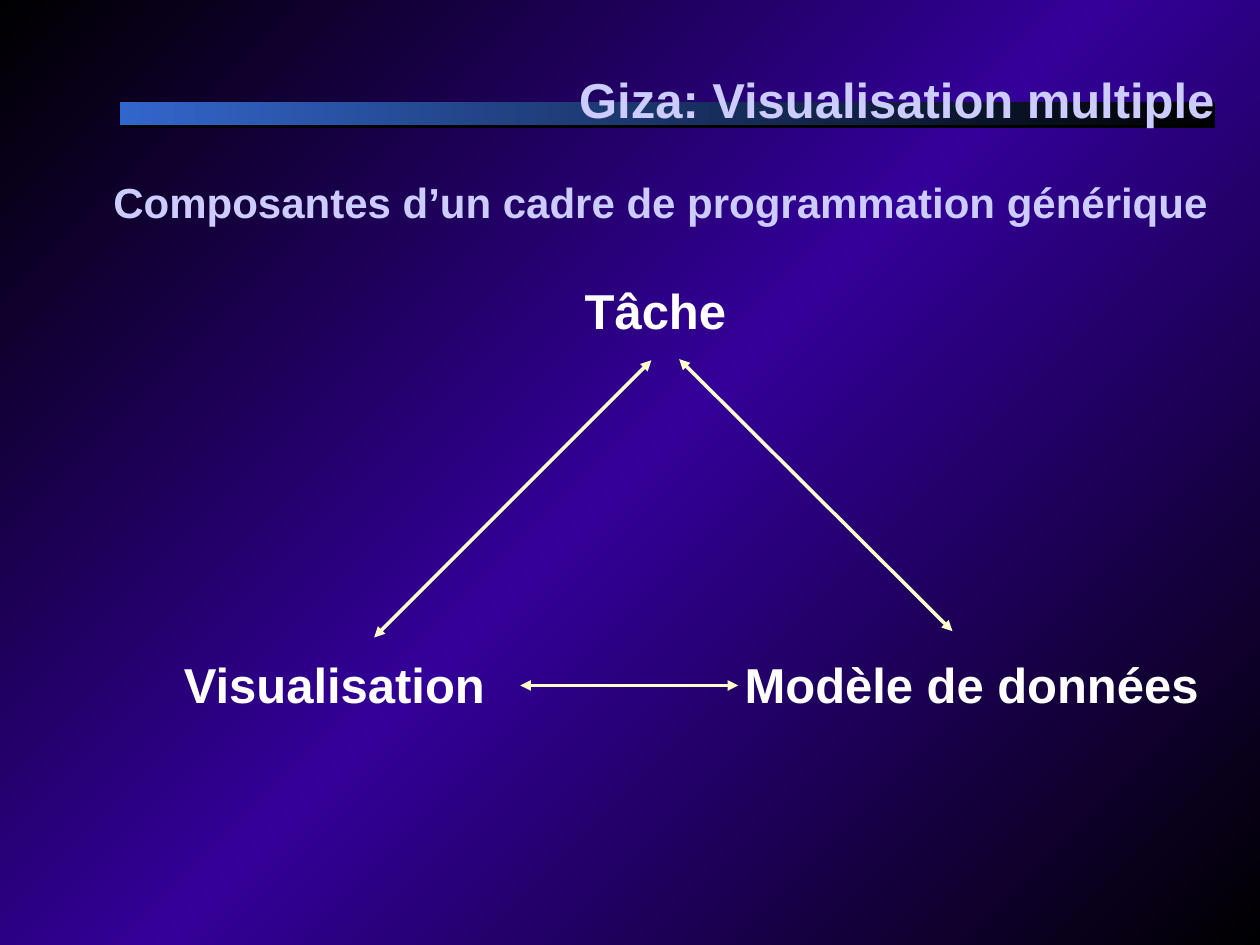
import pptx
import pptx.util
import pptx.dml.color
import pptx.enum.shapes
import pptx.enum.text
import pptx.oxml
import pptx.oxml.ns
from pptx.util import Pt

FONT = "Arial"
LAVENDER = "CCCCFF"
CREAM = "FFFFCC"


def colour(code):
    return pptx.dml.color.RGBColor.from_string(code)


def add_child(parent, tag, **attributes):
    child = pptx.oxml.parse_xml(f"<{tag} {pptx.oxml.ns.nsdecls('a')}/>")
    for name, value in attributes.items():
        child.set(name, str(value))
    parent.append(child)
    return child


def add_block(page, left, top, width, height):
    block = page.shapes.add_shape(
        pptx.enum.shapes.MSO_SHAPE.RECTANGLE, Pt(left), Pt(top), Pt(width), Pt(height))
    block.shadow.inherit = False
    block.line.fill.background()
    return block


def fill_gradient(block, stops, angle):
    block.fill.gradient()
    block.fill.gradient_angle = angle
    stop_list = block.fill._fill._gradFill.find(pptx.oxml.ns.qn("a:gsLst"))
    for old_stop in list(stop_list):
        stop_list.remove(old_stop)
    for percent, code in stops:
        stop = add_child(stop_list, "a:gs", pos=percent * 1000)
        add_child(stop, "a:srgbClr", val=code)


def add_label(page, text, left, top, width, height, size=28, code="FFFFFF"):
    box = page.shapes.add_textbox(Pt(left), Pt(top), Pt(width), Pt(height))
    frame = box.text_frame
    frame.word_wrap = False
    frame.margin_left = frame.margin_right = frame.margin_bottom = 0
    frame.margin_top = Pt(2.5)
    para = frame.paragraphs[0]
    para.text = text
    para.font.name = FONT
    para.font.size = Pt(size)
    para.font.bold = True
    para.font.color.rgb = colour(code)
    return para


def add_double_arrow(page, start, end):
    arrow = page.shapes.add_connector(
        pptx.enum.shapes.MSO_CONNECTOR.STRAIGHT, *map(Pt, start + end))
    arrow.line.color.rgb = colour(CREAM)
    arrow.line.width = Pt(2)
    line = arrow.line._get_or_add_ln()
    for tag in ("a:headEnd", "a:tailEnd"):
        add_child(line, tag, type="triangle")
    add_child(arrow._element.spPr, "a:effectLst")


def add_background(page, width, height):
    block = add_block(page, 0, 0, width, height)
    fill_gradient(block, [(0, "000000"), (50, "330099"), (100, "000000")], 315)


def add_header(page, left, top, width):
    shadow_bar = add_block(page, left + 1.4, top + 30.2, width, 13.7)
    shadow_bar.fill.solid()
    shadow_bar.fill.fore_color.rgb = colour("000000")
    shadow_bar.line.color.rgb = colour("000000")
    shadow_bar.line.width = Pt(1)
    bar = add_block(page, left, top + 29.5, width, 13)
    fill_gradient(bar, [(0, "3366CC"), (100, "000000")], 0)
    title = add_label(page, "Giza: Visualisation multiple",
                      left + 3.6, top, width - 2.2, 38.9, code=LAVENDER)
    title.alignment = pptx.enum.text.PP_ALIGN.RIGHT
    title.line_spacing = 1.25


def add_triangle(page, left, top):
    labels = [
        ("Tâche", 229, 0, 95),
        ("Visualisation", 0, 213.8, 187.2),
        ("Modèle de données", 320.4, 213.8, 274.3),
    ]
    for text, x, y, width in labels:
        add_label(page, text, left + x, top + y, width, 41)
    arrows = [
        ((267.1, 48.2), (108.7, 206.6)),
        ((283, 47.5), (439.2, 203)),
        ((192.2, 234), (316.8, 234)),
    ]
    for start, end in arrows:
        add_double_arrow(page, (left + start[0], top + start[1]),
                         (left + end[0], top + end[1]))


def main():
    deck = pptx.Presentation()
    deck.slide_width, deck.slide_height = Pt(720), Pt(540)
    page = deck.slides.add_slide(deck.slide_layouts[6])
    add_background(page, 720, 540)
    add_header(page, 68.4, 28.8, 624.2)
    add_label(page, "Composantes d’un cadre de programmation générique",
              64.8, 98.6, 625.7, 28.8, size=24, code=LAVENDER)
    add_triangle(page, 105.1, 157.7)
    deck.save("out.pptx")


if __name__ == "__main__":
    main()
